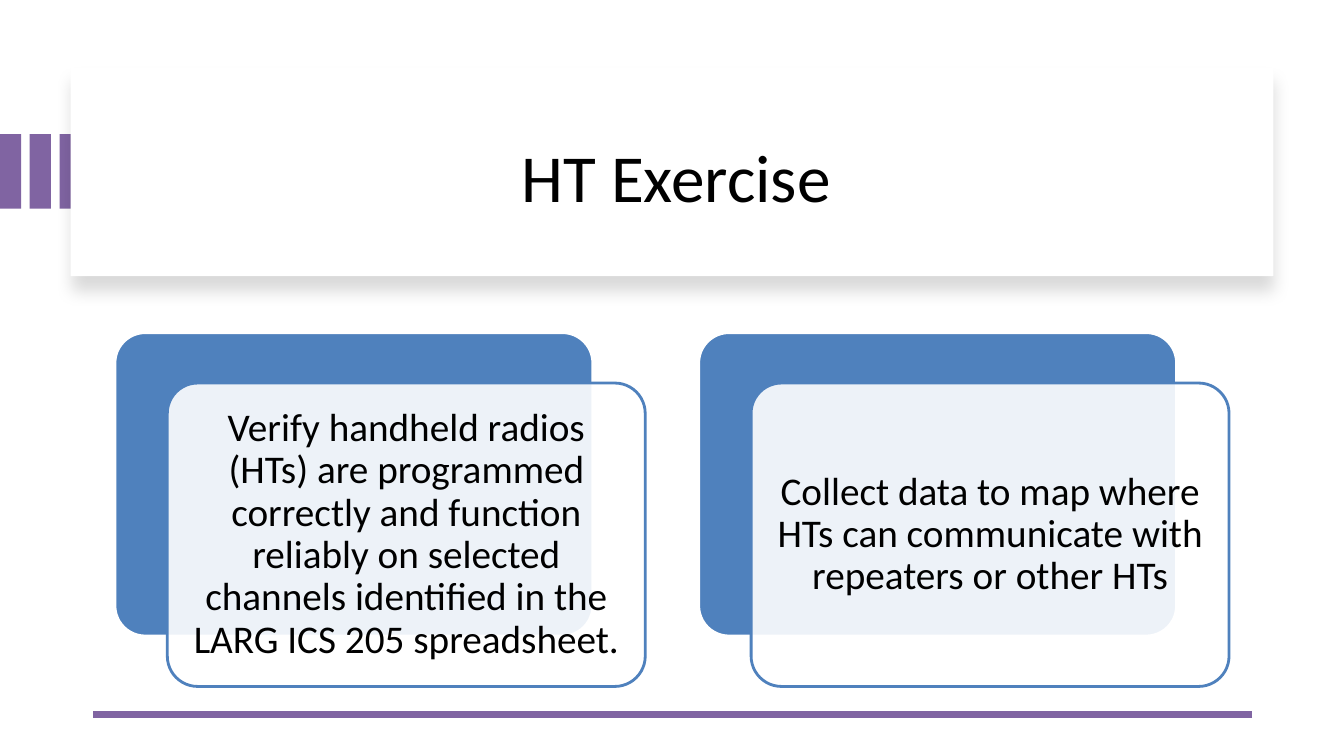
"""Build the HT Exercise slide: a titled panel above two layered cards."""
from lxml import etree
from pptx import Presentation
from pptx.dml.color import RGBColor
from pptx.enum.shapes import MSO_CONNECTOR, MSO_SHAPE as Shape
from pptx.enum.text import MSO_ANCHOR as Anchor, PP_ALIGN as Align
from pptx.oxml import parse_xml
from pptx.oxml.ns import nsdecls, qn
from pptx.util import Inches, Pt

PURPLE, BLUE, WHITE, BLACK = "8064A2", "4F81BD", "FFFFFF", "000000"
CARD_TEXTS = [
    "Verify handheld radios (HTs) are programmed correctly and function "
    "reliably on selected channels identified in the LARG ICS 205 spreadsheet.",
    "Collect data to map where HTs can communicate with repeaters or other HTs",
]


def paint(color_format, color):
    color_format.rgb = RGBColor.from_string(color)


def add_block(page, kind, left, top, width, height, fill, line=None):
    block = page.shapes.add_shape(
        kind, Inches(left), Inches(top), Inches(width), Inches(height))
    block.shadow.inherit = False
    block.fill.solid()
    paint(block.fill.fore_color, fill)
    if line:
        paint(block.line.color, line)
        block.line.width = Pt(2)
    else:
        block.line.fill.background()
    if kind == Shape.ROUNDED_RECTANGLE:
        block.adjustments[0] = 0.1
    return block


deck = Presentation()
deck.slide_width, deck.slide_height = Inches(13.33), Inches(7.5)
page = deck.slides.add_slide(deck.slide_layouts[5])

for column in range(3):
    add_block(page, Shape.RECTANGLE, column * 0.295, 1.33, 0.21, 0.74, PURPLE)

panel = add_block(page, Shape.RECTANGLE, 0.7, 0.67, 11.93, 2.07, WHITE)
effects = panel._element.spPr.find(qn("a:effectLst"))
effects.append(parse_xml(
    f'<a:outerShdw {nsdecls("a")} blurRad="{Pt(11)}" dist="{Pt(10)}" '
    'dir="5400000" algn="t" rotWithShape="0">'
    f'<a:srgbClr val="{BLACK}"><a:alpha val="15000"/></a:srgbClr></a:outerShdw>'))

title = page.shapes.title
title.left, title.top = Inches(1.14), Inches(0.89)
title.width, title.height = Inches(11.13), Inches(1.7)
title.text_frame.text = "HT Exercise"
title.text_frame.vertical_anchor = Anchor.MIDDLE
heading = title.text_frame.paragraphs[0]
heading.alignment = Align.CENTER
heading.font.size, heading.font.name = Pt(48), "Calibri"
paint(heading.font.color, BLACK)
page.shapes._spTree.append(title._element)

rule = page.shapes.add_connector(
    MSO_CONNECTOR.STRAIGHT, Inches(12.42), Inches(7.09), Inches(0.92), Inches(7.09))
paint(rule.line.color, PURPLE)
rule.line.width = Pt(4.5)
etree.SubElement(rule._element.spPr, qn("a:effectLst"))

for column, text in enumerate(CARD_TEXTS):
    left = 1.14 + column * 5.79
    add_block(page, Shape.ROUNDED_RECTANGLE, left, 3.3, 4.74, 3.01, BLUE, WHITE)
    card = add_block(
        page, Shape.ROUNDED_RECTANGLE, left + 0.52, 3.8, 4.74, 3.01, WHITE, BLUE)
    tint = card._element.spPr.find(qn("a:solidFill"))[0]
    etree.SubElement(tint, qn("a:alpha"), val="90000")

    box = page.shapes.add_textbox(
        Inches(left + 0.61), Inches(3.89), Inches(4.56), Inches(2.83))
    frame = box.text_frame
    frame.word_wrap = True
    frame.vertical_anchor = Anchor.MIDDLE
    frame.margin_left = frame.margin_right = Inches(0.12)
    frame.margin_top = frame.margin_bottom = Inches(0.12)
    frame.text = text
    para = frame.paragraphs[0]
    para.alignment = Align.CENTER
    para.line_spacing = 0.9
    para.font.size, para.font.name = Pt(28), "Calibri"
    paint(para.font.color, BLACK)

deck.save("out.pptx")
